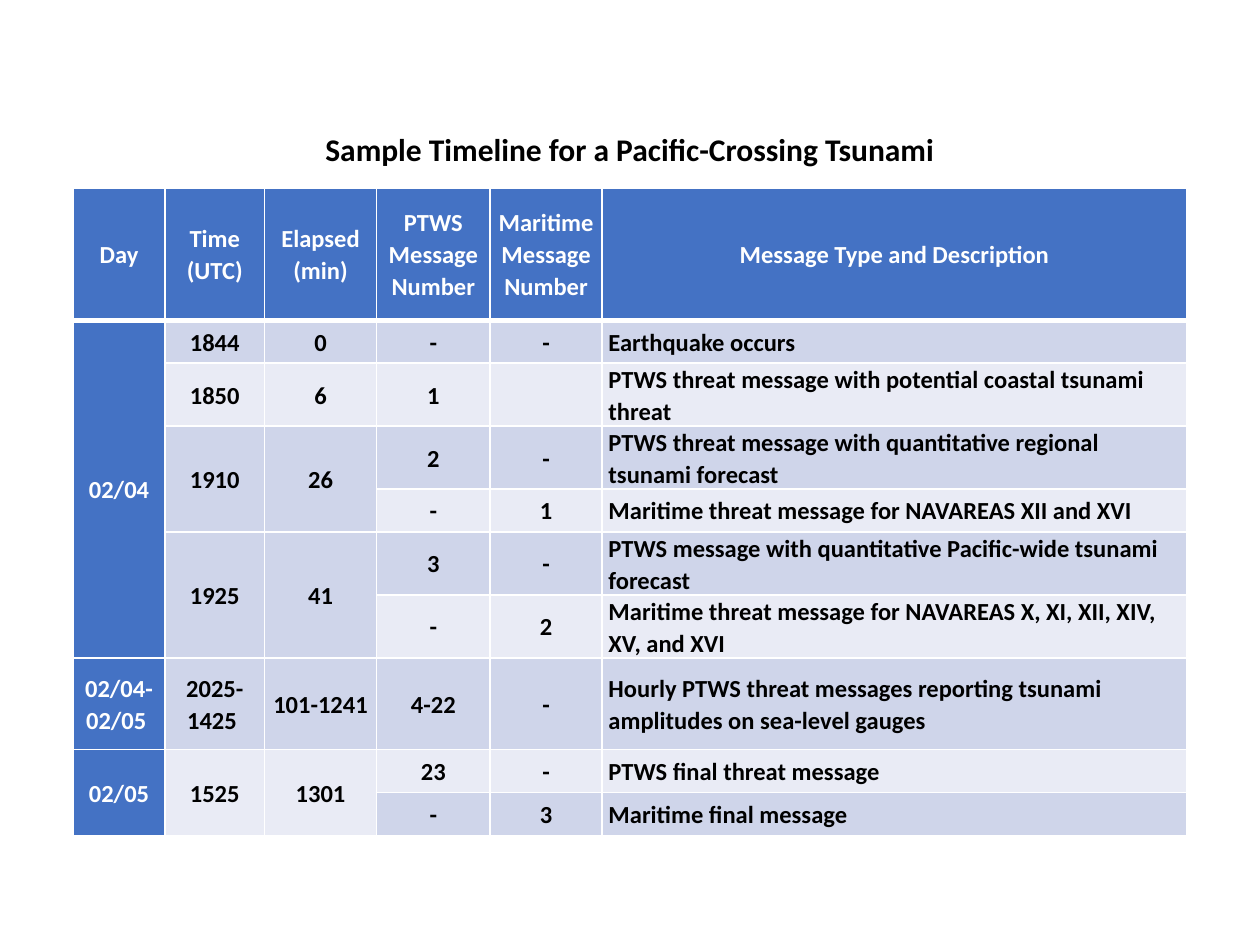
import pptx
import pptx.dml.color
import pptx.enum.text
import pptx.oxml
import pptx.oxml.ns
import pptx.util
from dataclasses import dataclass

Pt = pptx.util.Pt
RGB = pptx.dml.color.RGBColor.from_string
ALIGN = pptx.enum.text.PP_ALIGN
ANCHOR = pptx.enum.text.MSO_ANCHOR


@dataclass(frozen=True)
class Theme:
    font: str = "Calibri"
    title_size: float = 18
    cell_size: float = 14
    text: str = "000000"
    header_text: str = "FFFFFF"
    header_fill: str = "4472C4"
    bands: tuple = ("E9EBF5", "CFD5EA")
    border: str = "FFFFFF"
    thin: float = 1
    thick: float = 3


THEME = Theme()

COLUMN_WIDTHS = [52.56, 56.88, 64.08, 64.8, 64.08, 334.08]
ROW_HEIGHTS = [75.6] + [24.48] * 6 + [52.56] + [24.48] * 2
# None continues the cell above it.
ROWS = [
    ["Day", "Time\n(UTC)", "Elapsed\n(min)", "PTWS\nMessage\nNumber",
     "Maritime\nMessage\nNumber", "Message Type and Description"],
    ["02/04", "1844", "0", "-", "-", "Earthquake occurs"],
    [None, "1850", "6", "1", "",
     "PTWS threat message with potential coastal tsunami threat"],
    [None, "1910", "26", "2", "-",
     "PTWS threat message with quantitative regional tsunami forecast"],
    [None, None, None, "-", "1",
     "Maritime threat message for NAVAREAS XII and XVI"],
    [None, "1925", "41", "3", "-",
     "PTWS message with quantitative Pacific-wide tsunami forecast"],
    [None, None, None, "-", "2",
     "Maritime threat message for NAVAREAS X, XI, XII, XIV, XV, and XVI"],
    ["02/04-\n02/05 ", "2025-1425 ", "101-1241", "4-22", "-",
     "Hourly PTWS threat messages reporting tsunami amplitudes on sea-level gauges"],
    ["02/05", "1525", "1301", "23", "-", "PTWS final threat message"],
    [None, None, None, "-", "3", "Maritime final message"],
]


def write_text(tf, text, size, color, align=ALIGN.CENTER, spacing=1.0):
    for i, line in enumerate(text.split("\n")):
        p = tf.paragraphs[0] if i == 0 else tf.add_paragraph()
        p.alignment = align
        p.line_spacing = spacing
        p.font.size = Pt(size)
        if not line:
            continue
        r = p.add_run()
        r.text = line
        r.font.name = THEME.font
        r.font.size = Pt(size)
        r.font.bold = True
        r.font.color.rgb = RGB(color)


def set_borders(cell, **widths):
    """Draw the four cell borders; L, R, T or B overrides the thin width."""
    tc_pr = cell._tc.get_or_add_tcPr()
    for i, side in enumerate("LRTB"):
        width = Pt(widths.get(side, THEME.thin))
        tc_pr.insert(i, pptx.oxml.parse_xml(
            f'<a:ln{side} {pptx.oxml.ns.nsdecls("a")} w="{width}"><a:solidFill>'
            f'<a:srgbClr val="{THEME.border}"/></a:solidFill></a:ln{side}>'))


def add_title(slide, text, left, top, width, height):
    sp = slide.shapes.title
    sp.left, sp.top, sp.width, sp.height = map(Pt, (left, top, width, height))
    tf = sp.text_frame
    tf.word_wrap = True
    tf.vertical_anchor = ANCHOR.TOP
    tf.auto_size = pptx.enum.text.MSO_AUTO_SIZE.SHAPE_TO_FIT_TEXT
    write_text(tf, text, THEME.title_size, THEME.text)


def format_cell(cell, row, column, text):
    is_header = row == 0 or column == 0
    is_description = row > 0 and column == len(COLUMN_WIDTHS) - 1
    cell.fill.solid()
    cell.fill.fore_color.rgb = RGB(
        THEME.header_fill if is_header else THEME.bands[row % 2])
    header_edge = {0: "B", 1: "T"}.get(row)
    set_borders(cell, **({header_edge: THEME.thick} if header_edge else {}))
    cell.vertical_anchor = ANCHOR.MIDDLE
    cell.margin_left = cell.margin_right = Pt(3.6)
    cell.margin_top = cell.margin_bottom = Pt(0)
    write_text(cell.text_frame, text, THEME.cell_size,
               THEME.header_text if is_header else THEME.text,
               align=ALIGN.LEFT if is_description else ALIGN.CENTER,
               spacing=1.07)


def merge_continued(table):
    for c in range(len(COLUMN_WIDTHS)):
        for r in range(len(ROWS)):
            end = r
            while end + 1 < len(ROWS) and ROWS[end + 1][c] is None:
                end += 1
            if ROWS[r][c] is not None and end > r:
                table.cell(r, c).merge(table.cell(end, c))


def add_timeline(slide, left, top):
    table = slide.shapes.add_table(
        len(ROWS), len(COLUMN_WIDTHS), Pt(left), Pt(top),
        Pt(sum(COLUMN_WIDTHS)), Pt(sum(ROW_HEIGHTS))).table
    for column, width in zip(table.columns, COLUMN_WIDTHS):
        column.width = Pt(width)
    for row, height in zip(table.rows, ROW_HEIGHTS):
        row.height = Pt(height)
    for r, values in enumerate(ROWS):
        for c, text in enumerate(values):
            format_cell(table.cell(r, c), r, c, text or "")
    merge_continued(table)


def main():
    prs = pptx.Presentation()
    prs.slide_width, prs.slide_height = Pt(720), Pt(540)
    slide = prs.slides.add_slide(prs.slide_layouts.get_by_name("Title Only"))
    add_timeline(slide, 41.76, 107.5)
    add_title(slide, "Sample Timeline for a Pacific-Crossing Tsunami",
              60.5, 70.75, 599, 29)
    prs.save("out.pptx")


if __name__ == "__main__":
    main()
